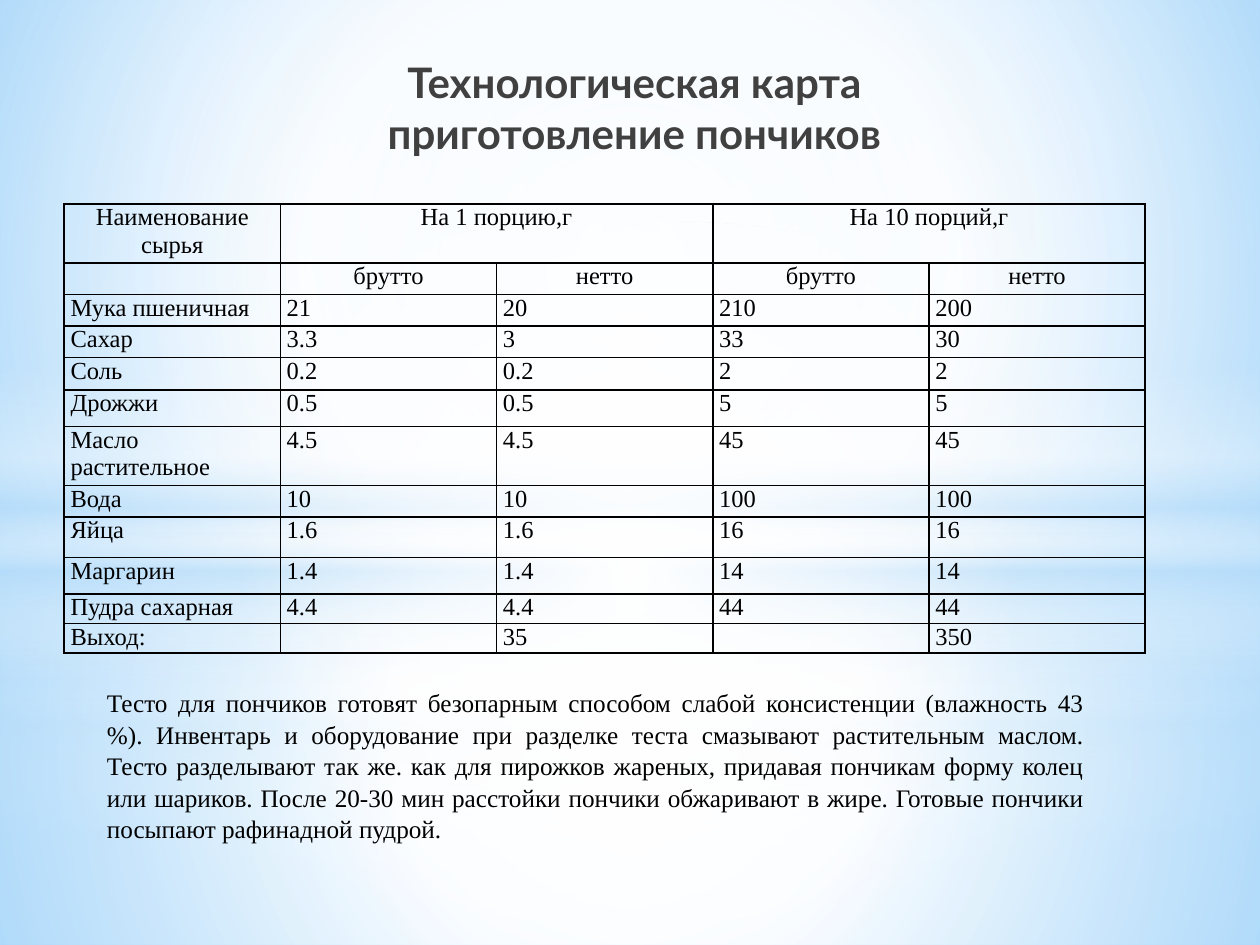
"""Build a slide with the recipe table for doughnuts on a soft blue backdrop."""
from lxml import etree
from pptx import Presentation, util as u
from pptx.dml.color import RGBColor
from pptx.enum import shapes, text
from pptx.oxml import ns

HUE = {"white": "FFFFFF", "mist": "B4DCFA", "sky": "9ED5FF", "blue": "5BB9FF",
       "ink": "000000", "grey": "404040"}
SERIF = "Times New Roman"

deck = Presentation()
deck.slide_width, deck.slide_height = u.Inches(10), u.Inches(7.5)
wide, high = deck.slide_width / 100, deck.slide_height / 100
slide = deck.slides.add_slide(deck.slide_layouts[6])


def area(left, top, width, height):
    """Turn percentages of the slide into lengths."""
    return [round(n * s) for n, s in zip((left, top, width, height), (wide, high) * 2)]


def paint(node, stops, focus=None):
    """Swap the solid fill in node for a gradient."""
    old = node.xpath(".//a:solidFill")[0]
    grad = etree.Element(ns.qn("a:gradFill"), rotWithShape="1")
    old.getparent().replace(old, grad)
    row = etree.SubElement(grad, ns.qn("a:gsLst"))
    for pos, hue, alpha in stops:
        stop = etree.SubElement(row, ns.qn("a:gs"), pos=str(pos * 1000))
        tint = etree.SubElement(stop, ns.qn("a:srgbClr"), val=HUE[hue])
        if alpha < 100:
            etree.SubElement(tint, ns.qn("a:alpha"), val=str(alpha * 1000))
    if focus:
        way = etree.SubElement(grad, ns.qn("a:path"), path="circle")
        rect = etree.SubElement(way, ns.qn("a:fillToRect"))
        for side, part in zip("ltrb", focus):
            rect.set(side, str(part * 1000))
    else:
        etree.SubElement(grad, ns.qn("a:lin"), ang="5400000", scaled="0")


slide.background.fill.solid()
paint(slide.background.fill._xPr, [(0, "sky", 100), (60, "white", 100), (100, "blue", 100)],
      (20, 10, 20, 60))

kind = shapes.MSO_SHAPE
mid = (50,) * 4
wave = [(0, "white", 0), (29, "white", 30), (45, "mist", 40),
        (55, "white", 26), (65, "mist", 60), (100, "white", 0)]
for split, band, add, fade in ((74.4, 54.93, 0, 56), (56.4, 38.67, 1, 54)):
    low = [(0, "white", 91 + add), (37, "white", 76 + add), (100, "mist", 79 + add)]
    top = [(0, "white", 89 + add), (48, "white", 62 + add), (100, "mist", 79 + add)]
    glow = [(0, "white", 100), (fade, "white", 0)]
    for form, y, tall, stops, focus in (
            (kind.RECTANGLE, split, 100 - split, low, mid),
            (kind.RECTANGLE, 0, split, top, mid),
            (kind.RECTANGLE, band, 33.33, wave, None),
            (kind.OVAL, 23.33, 74.4, glow, mid)):
        pane = slide.shapes.add_shape(form, *area(0, y, 100, tall))
        pane.shadow.inherit = False
        pane.line.fill.background()
        pane.fill.solid()
        paint(pane.element.spPr, stops, focus)

title = "Технологическая карта\vприготовление пончиков"
note = ("Тесто для пончиков готовят безопарным способом слабой консистенции (влажность 43 %). "
        "Инвентарь и оборудование при разделке теста смазывают растительным маслом. "
        "Тесто разделывают так же. как для пирожков жареных, придавая пончикам форму колец "
        "или шариков. После 20-30 мин расстойки пончики обжаривают в жире. "
        "Готовые пончики посыпают рафинадной пудрой.")
side = text.PP_ALIGN
edge = text.MSO_ANCHOR
for words, spot, size, face, hue, bold, align, hold, gap in (
        (title, (17.7, 4.8, 65.3, 12.53), 24, "Lato", "grey", True, side.CENTER, edge.BOTTOM, 1),
        (note, (7.5, 72, 79.5, 14.67), 14.4, SERIF, "ink", False, side.JUSTIFY, edge.TOP, 1.04)):
    frame = slide.shapes.add_textbox(*area(*spot)).text_frame
    frame.word_wrap = True
    frame.vertical_anchor = hold
    frame.text = words
    para = frame.paragraphs[0]
    para.alignment, para.line_spacing = align, gap
    for run in para.runs:
        run.font.size, run.font.name, run.font.bold = u.Pt(size), face, bold
        run.font.color.rgb = RGBColor.from_string(HUE[hue])

rows = [
    ("Наименование сырья", "На 1 порцию,г", "", "На 10 порций,г", ""),
    ("", "брутто", "нетто", "брутто", "нетто"),
    ("Мука пшеничная", "21", "20", "210", "200"),
    ("Сахар", "3.3", "3", "33", "30"),
    ("Соль", "0.2", "0.2", "2", "2"),
    ("Дрожжи", "0.5", "0.5", "5", "5"),
    ("Масло растительное", "4.5", "4.5", "45", "45"),
    ("Вода", "10", "10", "100", "100"),
    ("Яйца", "1.6", "1.6", "16", "16"),
    ("Маргарин", "1.4", "1.4", "14", "14"),
    ("Пудра сахарная", "4.4", "4.4", "44", "44"),
    ("Выход:", "", "35", "", "350"),
]
talls = (3.47, 3.33, 3.33, 3.33, 3.47, 3.87, 3.33, 3.33, 4.27, 3.87, 2.53, 3.07)
grid = slide.shapes.add_table(len(rows), 5, *area(5.1, 21.6, 85.8, sum(talls))).table
grid.first_row = grid.horz_banding = False
for col in grid.columns:
    col.width = round(17.16 * wide)
for r, (line, tall) in enumerate(zip(rows, talls)):
    grid.rows[r].height = round(tall * high)
    for c, words in enumerate(line):
        cell = grid.cell(r, c)
        cell.margin_left = cell.margin_right = u.Inches(0.05)
        cell.margin_top = cell.margin_bottom = 0
        cell.text = words
        para = cell.text_frame.paragraphs[0]
        para.alignment = side.CENTER if r < 2 else side.LEFT
        for run in para.runs:
            run.font.size, run.font.name = u.Pt(14), SERIF
            run.font.color.rgb = RGBColor.from_string(HUE["ink"])
        if not words:
            etree.SubElement(para._p, ns.qn("a:endParaRPr"), sz="1400")
        prop = cell._tc.get_or_add_tcPr()
        for tag in ("lnL", "lnR", "lnT", "lnB"):
            rule = etree.SubElement(prop, ns.qn("a:" + tag), w=str(u.Pt(1)))
            fill = etree.SubElement(rule, ns.qn("a:solidFill"))
            etree.SubElement(fill, ns.qn("a:srgbClr"), val=HUE["ink"])
        cell.fill.background()
for c in (1, 3):
    grid.cell(0, c).merge(grid.cell(0, c + 1))

deck.save("out.pptx")
